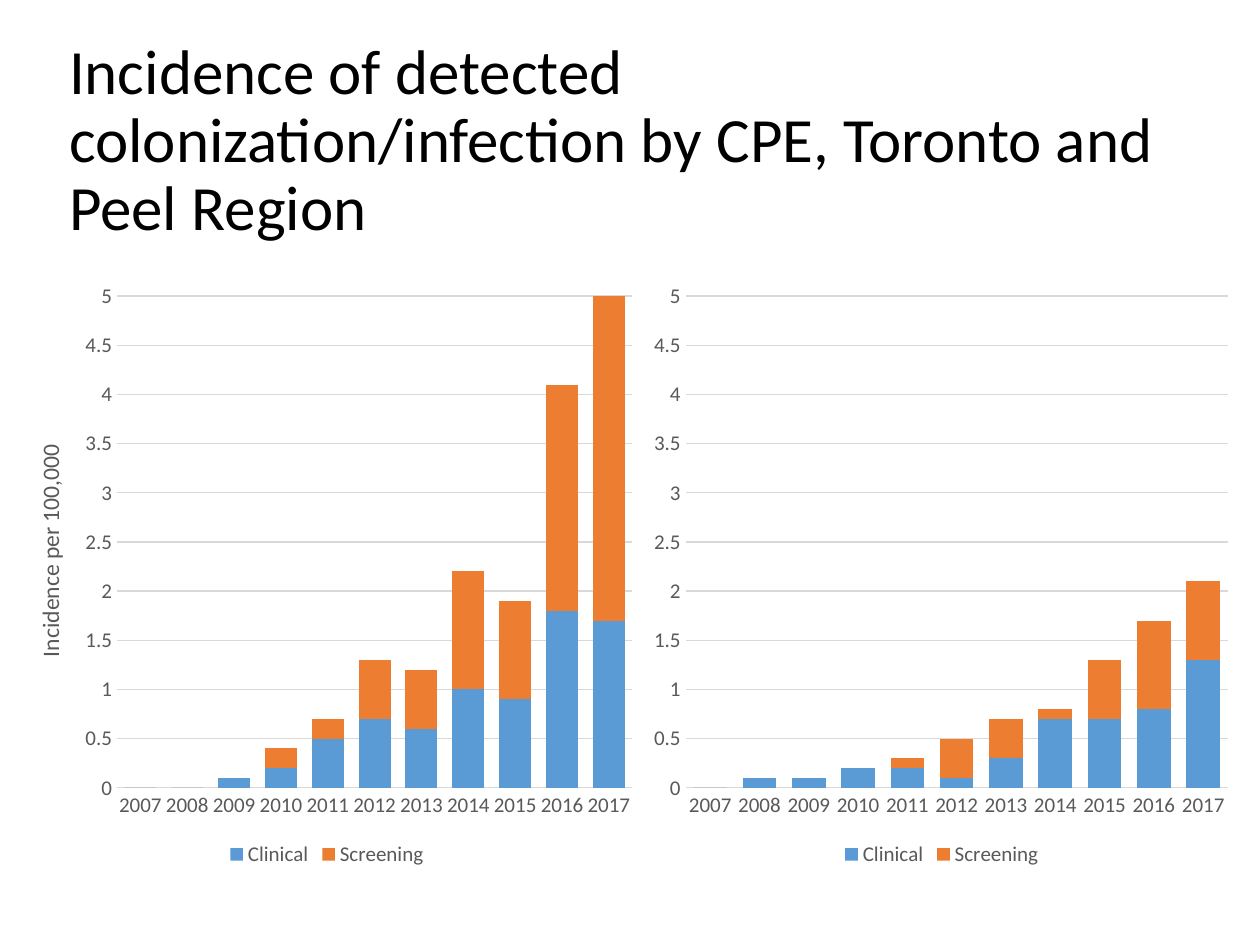
from pptx import Presentation
from pptx.chart.data import CategoryChartData as Data
from pptx.dml.color import RGBColor as Color
from pptx.enum.chart import XL_CHART_TYPE as Kind, XL_LEGEND_POSITION as Legend, XL_TICK_MARK as Tick
from pptx.enum.text import MSO_ANCHOR as Anchor
from pptx.oxml import parse_xml
from pptx.oxml.ns import nsdecls
from pptx.util import Inches, Pt

TITLE = "Incidence of detected colonization/infection by CPE, Toronto and Peel Region"
YEARS = [str(year) for year in range(2007, 2018)]
CHARTS = [
    {
        "left": 0.07, "width": 5.05, "plot": (0.17, 0.81),
        "label": "Incidence per 100,000",
        "Clinical": (0, 0, 0.1, 0.2, 0.5, 0.7, 0.6, 1, 0.9, 1.8, 1.7),
        "Screening": (0, 0, 0, 0.2, 0.2, 0.6, 0.6, 1.2, 1, 2.3, 3.4),
    },
    {
        "left": 5.11, "width": 4.73, "plot": (0.07, 0.91),
        "label": None,
        "Clinical": (0, 0.1, 0.1, 0.2, 0.2, 0.1, 0.3, 0.7, 0.7, 0.8, 1.3),
        "Screening": (0, 0, 0, 0, 0.1, 0.4, 0.4, 0.1, 0.6, 0.9, 0.8),
    },
]
TOP, HEIGHT = 2.16, 4.76
PLOT_Y, PLOT_H = 0.04, 0.82
THEME = {
    "font": "Calibri", "title": 36, "label": 13.5, "body": 12,
    "ink": "000000", "grey": "595959", "grid": "D9D9D9",
    "Clinical": "5B9BD5", "Screening": "ED7D31",
}


def style(font, size, color):
    font.name = THEME["font"]
    font.size = Pt(THEME[size])
    font.bold = False
    font.color.rgb = Color.from_string(THEME[color])


def rule(line):
    line.color.rgb = Color.from_string(THEME["grid"])
    line.width = Pt(0.75)


def place(chart, left, width):
    spots = {"x": left, "y": PLOT_Y, "w": width, "h": PLOT_H}
    parts = '<c:layoutTarget val="inner"/><c:xMode val="edge"/><c:yMode val="edge"/>'
    parts += "".join(f'<c:{key} val="{val}"/>' for key, val in spots.items())
    area = chart._chartSpace.chart.plotArea
    for old in area.findall("{*}layout"):
        area.remove(old)
    area.insert(0, parse_xml(
        f'<c:layout {nsdecls("c")}><c:manualLayout>{parts}</c:manualLayout></c:layout>'))


def add_title(slide):
    box = slide.shapes.add_textbox(Inches(0.45), Inches(0.4), Inches(9.11), Inches(1.45))
    frame = box.text_frame
    frame.word_wrap = True
    frame.vertical_anchor = Anchor.MIDDLE
    para = frame.paragraphs[0]
    para.text = TITLE
    para.line_spacing = 0.9
    style(para.font, "title", "ink")


def add_bars(slide, item):
    data = Data()
    data.categories = YEARS
    for name in ("Clinical", "Screening"):
        data.add_series(name, item[name])
    chart = slide.shapes.add_chart(
        Kind.COLUMN_STACKED, Inches(item["left"]), Inches(TOP),
        Inches(item["width"]), Inches(HEIGHT), data).chart
    style(chart.font, "body", "grey")
    chart.has_title = False
    chart.has_legend = True
    chart.legend.position = Legend.BOTTOM
    chart.legend.include_in_layout = False
    style(chart.legend.font, "body", "grey")

    bars = chart.plots[0]
    bars.gap_width, bars.overlap = 47, 100
    bars.vary_by_categories = False
    for row in bars.series:
        row.format.fill.solid()
        row.format.fill.fore_color.rgb = Color.from_string(THEME[row.name])

    years, rates = chart.category_axis, chart.value_axis
    for axis in (years, rates):
        axis.major_tick_mark = axis.minor_tick_mark = Tick.NONE
        style(axis.tick_labels.font, "body", "grey")
    rule(years.format.line)
    rates.format.line.fill.background()
    rates.minimum_scale, rates.maximum_scale, rates.major_unit = 0, 5, 0.5
    rates.has_major_gridlines = True
    rule(rates.major_gridlines.format.line)
    if item["label"]:
        para = rates.axis_title.text_frame.paragraphs[0]
        para.text = item["label"]
        style(para.font, "label", "grey")
    place(chart, *item["plot"])


def main():
    deck = Presentation()
    deck.slide_width, deck.slide_height = Inches(10), Inches(7.5)
    slide = deck.slides.add_slide(deck.slide_layouts[6])
    add_title(slide)
    for item in CHARTS:
        add_bars(slide, item)
    deck.save("out.pptx")


if __name__ == "__main__":
    main()
